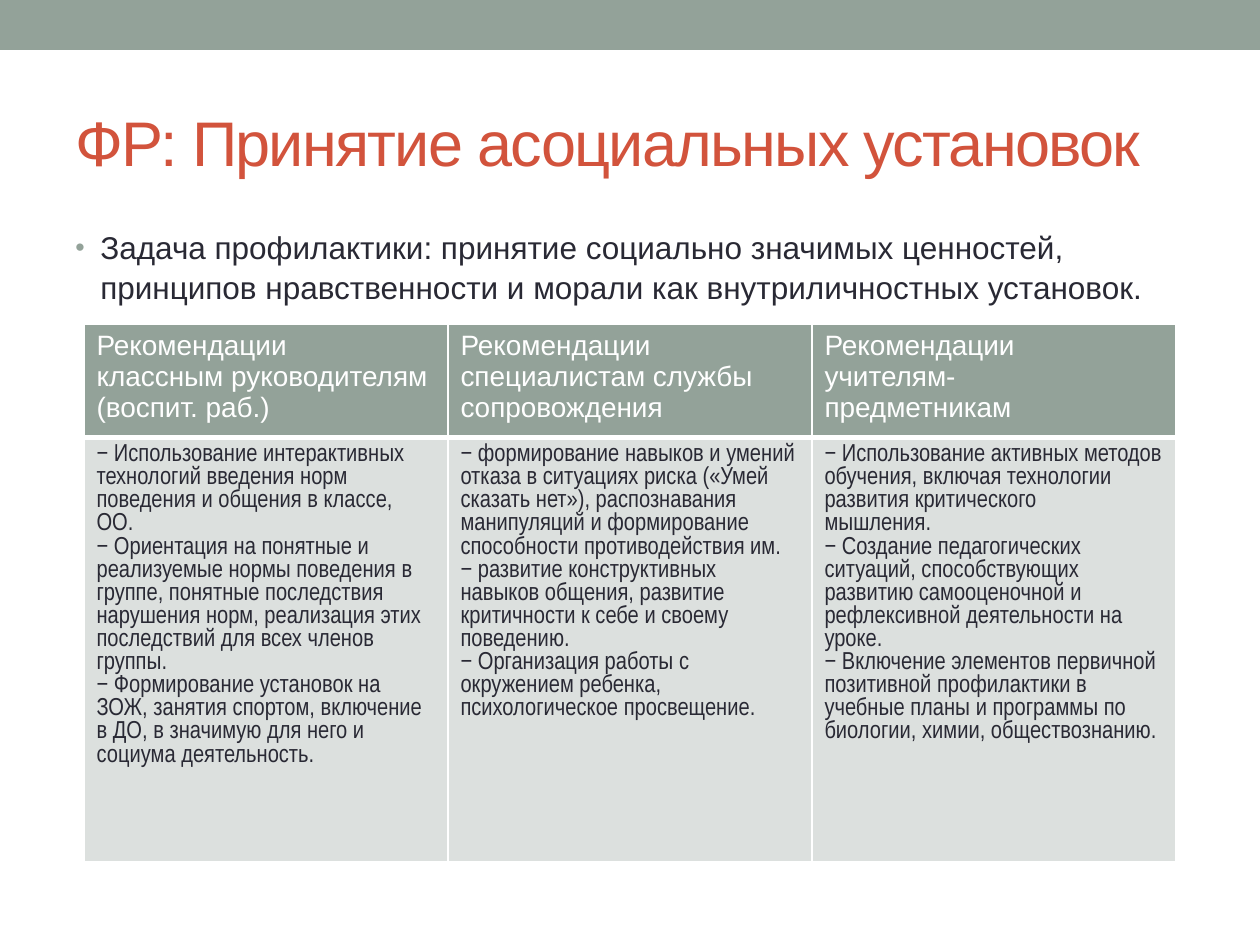
import pptx
import pptx.util
import pptx.dml.color
import pptx.enum.shapes
import pptx.enum.text
import pptx.oxml

PX = 914400 // 126
NAMESPACE = 'xmlns:a="http://schemas.openxmlformats.org/drawingml/2006/main"'
SAGE, RUST, INK, WHITE, PALE = "93A299", "D2533C", "292934", "FFFFFF", "DCE0DE"


def color(code):
    return pptx.dml.color.RGBColor.from_string(code)


def write(frame, text, size, code, font="Arial", anchor="TOP", spacing=None):
    frame.word_wrap = True
    frame.vertical_anchor = pptx.enum.text.MSO_ANCHOR[anchor]
    for index, line in enumerate(text.split("\n")):
        para = frame.paragraphs[0] if index == 0 else frame.add_paragraph()
        para.alignment = pptx.enum.text.PP_ALIGN.LEFT
        para.line_spacing = spacing
        span = para.add_run()
        span.text = line
        span.font.size = pptx.util.Pt(size)
        span.font.name = font
        span.font.bold = False
        span.font.color.rgb = color(code)


deck = pptx.Presentation()
deck.slide_width, deck.slide_height = 1260 * PX, 945 * PX
slide = deck.slides.add_slide(deck.slide_layouts[5])

bar = slide.shapes.add_shape(
    pptx.enum.shapes.MSO_SHAPE.RECTANGLE, 0, 0, 1260 * PX, 50 * PX)
bar.shadow.inherit = False
bar.fill.solid()
bar.fill.fore_color.rgb = color(SAGE)
bar.line.fill.background()

title = slide.shapes.title
title.left, title.top, title.width, title.height = 63 * PX, 73 * PX, 1134 * PX, 136 * PX
write(title.text_frame, "ФР: Принятие асоциальных установок", 36, RUST, anchor="MIDDLE")
title.text_frame.paragraphs[0].runs[0].font._element.set("spc", "-100")

task = slide.shapes.add_textbox(63 * PX, 220 * PX, 1134 * PX, 90 * PX)
write(task.text_frame,
      "Задача профилактики: принятие социально значимых ценностей, "
      "принципов нравственности и морали как внутриличностных установок.",
      18, INK, spacing=1.05)
properties = task.text_frame.paragraphs[0]._p.get_or_add_pPr()
properties.set("marL", str(25 * PX))
properties.set("indent", str(-25 * PX))
for bullet in (f'<a:buClr {NAMESPACE}><a:srgbClr val="{SAGE}"/></a:buClr>',
               f'<a:buSzPct {NAMESPACE} val="85000"/>',
               f'<a:buFont {NAMESPACE} typeface="Arial"/>',
               f'<a:buChar {NAMESPACE} char="•"/>'):
    properties.append(pptx.oxml.parse_xml(bullet))

headings = [
    "Рекомендации\nклассным руководителям (воспит. раб.)",
    "Рекомендации\nспециалистам службы\nсопровождения",
    "Рекомендации\nучителям-\nпредметникам",
]
advice = [
    """− Использование интерактивных технологий введения норм поведения и общения в классе, ОО.
− Ориентация на понятные и
реализуемые нормы поведения в группе, понятные последствия
нарушения норм, реализация этих
последствий для всех членов группы.
− Формирование установок на ЗОЖ, занятия спортом, включение в ДО, в значимую для него и
социума деятельность.""",
    """− формирование навыков и умений отказа в ситуациях риска («Умей сказать нет»), распознавания
манипуляций и формирование способности противодействия им.
− развитие конструктивных
навыков общения, развитие критичности к себе и своему
поведению.
− Организация работы с окружением ребенка, психологическое просвещение.""",
    """− Использование активных методов обучения, включая технологии развития критического
мышления.
− Создание педагогических
ситуаций, способствующих
развитию самооценочной и
рефлексивной деятельности на
уроке.
− Включение элементов первичной
позитивной профилактики в учебные планы и программы по
биологии, химии, обществознанию.""",
]
rows = [
    (headings, 106, SAGE, {"size": 16, "code": WHITE}),
    (advice, 335, PALE, {"size": 14, "code": INK, "font": "Arial Narrow"}),
]

table = slide.shapes.add_table(2, 3, 84 * PX, 324 * PX, 1092 * PX, 441 * PX).table
for column in table.columns:
    column.width = 364 * PX
for row, (texts, height, fill, style) in enumerate(rows):
    table.rows[row].height = height * PX
    for column, text in enumerate(texts):
        cell = table.cell(row, column)
        write(cell.text_frame, text, **style)
        for side in "LRTB":
            heavy = (row, side) in ((0, "B"), (1, "T"))
            width = pptx.util.Pt(3 if heavy else 1)
            cell._tc.get_or_add_tcPr().append(pptx.oxml.parse_xml(
                f'<a:ln{side} {NAMESPACE} w="{width}"><a:solidFill>'
                f'<a:srgbClr val="{WHITE}"/></a:solidFill></a:ln{side}>'))
        cell.fill.solid()
        cell.fill.fore_color.rgb = color(fill)

deck.save("out.pptx")
